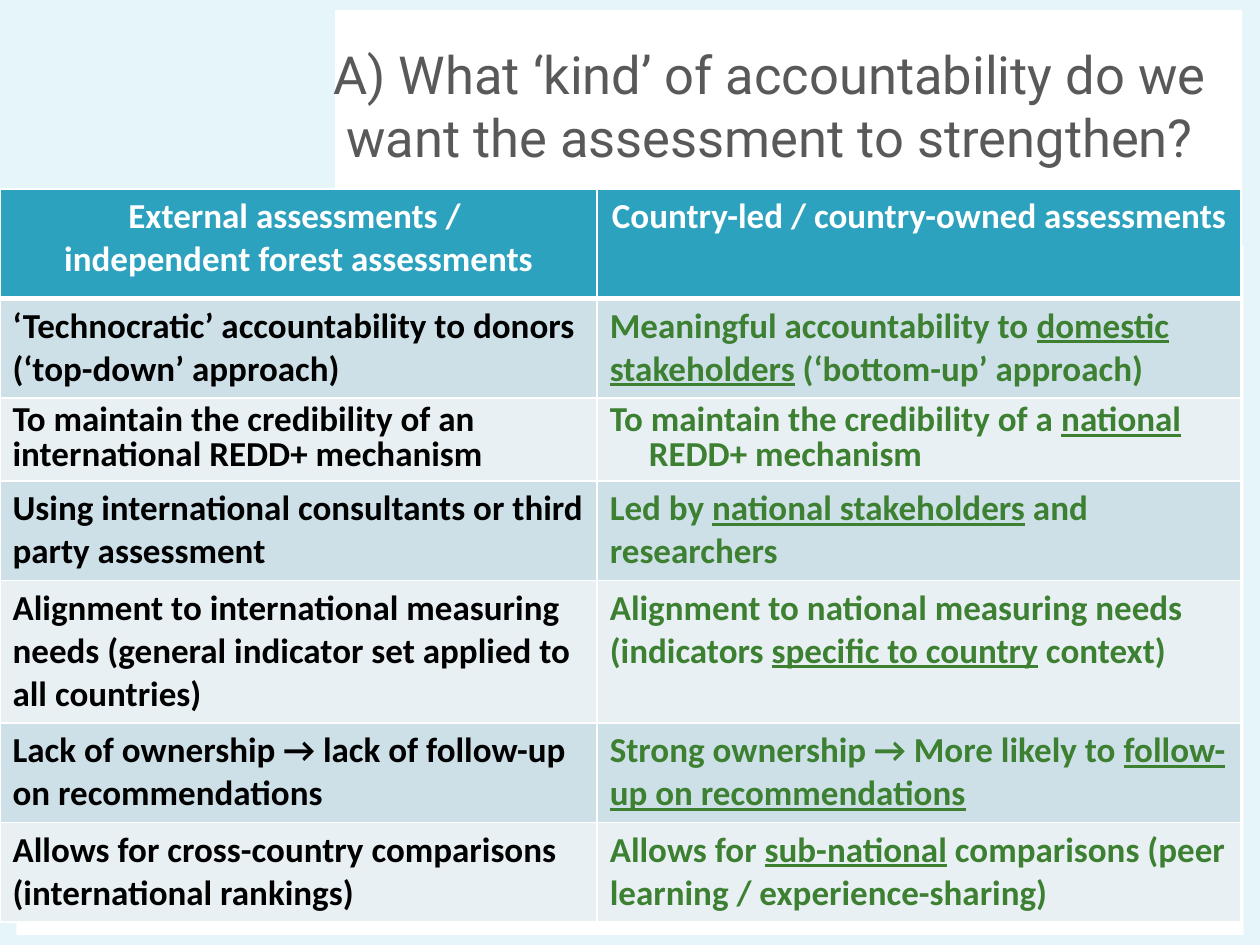
import pptx
import pptx.util
import pptx.dml.color
import pptx.enum.shapes
import pptx.enum.text
import pptx.oxml
import pptx.oxml.ns

RGB = pptx.dml.color.RGBColor
ALIGN = pptx.enum.text.PP_ALIGN
Pt = pptx.util.Pt
Inches = pptx.util.Inches

SKY = RGB(0xE5, 0xF5, 0xFA)
WHITE = RGB(0xFF, 0xFF, 0xFF)
BLACK = RGB(0, 0, 0)
GREY = RGB(0x59, 0x59, 0x59)
GREEN = RGB(0x3D, 0x80, 0x32)
TEAL = RGB(0x2D, 0xA2, 0xBF)
BANDS = [RGB(0xCD, 0xE0, 0xE8), RGB(0xE8, 0xF0, 0xF4)]

TITLE = "A) What ‘kind’ of accountability do we want the assessment to strengthen?"
HEADS = ["External assessments / \nindependent forest assessments",
         "Country-led / country-owned assessments"]
# Underscores enclose underlined words
ROWS = [
    ["‘Technocratic’ accountability to donors\n(‘top-down’ approach)",
     "Meaningful accountability to _domestic stakeholders_ (‘bottom-up’ approach)"],
    ["To maintain the credibility of an international REDD+ mechanism",
     "To maintain the credibility of a _national_ REDD+ mechanism"],
    ["Using international consultants or third party assessment",
     "Led by _national stakeholders_ and researchers"],
    ["Alignment to international measuring needs (general indicator set applied to all countries)",
     "Alignment to national measuring needs (indicators _specific to country_ context)"],
    ["Lack of ownership → lack of follow-up on recommendations",
     "Strong ownership → More likely to _follow-up on recommendations_"],
    ["Allows for cross-country comparisons (international rankings)",
     "Allows for _sub-national_ comparisons (peer learning / experience-sharing)"],
]
WIDTHS = [4.74, 5.11]
HEIGHTS = [0.87, 0.79, 0.66, 0.79, 1.13, 0.79, 0.79]
TIGHT = 2  # table row with close line spacing


def add_panel(slide, box):
    """White panel behind the content."""
    panel = slide.shapes.add_shape(pptx.enum.shapes.MSO_SHAPE.RECTANGLE,
                                   *map(Inches, box))
    panel.shadow.inherit = False
    panel.fill.solid()
    panel.fill.fore_color.rgb = WHITE
    panel.line.fill.background()


def set_title(slide, box):
    """Title placeholder, brought in front of the panels."""
    title = slide.shapes.title
    title.left, title.top, title.width, title.height = map(Inches, box)
    frame = title.text_frame
    frame.text = TITLE
    frame.word_wrap = True
    frame.auto_size = pptx.enum.text.MSO_AUTO_SIZE.NONE
    frame.vertical_anchor = pptx.enum.text.MSO_ANCHOR.MIDDLE
    para = frame.paragraphs[0]
    para.alignment = ALIGN.CENTER
    font = para.runs[0].font
    font.name, font.size, font.color.rgb = "Roboto", Pt(30), GREY
    slide.shapes._spTree.append(title._element)


def style_cell(cell, fill, base):
    """White borders, then the fill; base is the lower border in points."""
    props = cell._tc.get_or_add_tcPr()
    for side, width in zip("LRTB", [1, 1, 1, base]):
        props.append(pptx.oxml.parse_xml(
            f'<a:ln{side} {pptx.oxml.ns.nsdecls("a")} w="{Pt(width)}">'
            f'<a:solidFill><a:srgbClr val="{WHITE}"/></a:solidFill></a:ln{side}>'))
    cell.fill.solid()
    cell.fill.fore_color.rgb = fill


def write_cell(cell, text, color, align):
    cell.text_frame.text = text.replace("_", "")
    for para, line in zip(cell.text_frame.paragraphs, text.split("\n")):
        para.alignment = align
        para.clear()
        for i, part in enumerate(line.split("_")):
            if not part:
                continue
            run = para.add_run()
            run.text = part
            font = run.font
            font.name, font.size, font.bold = "Calibri", Pt(20), True
            font.color.rgb = color
            font.underline = i % 2 == 1


def add_grid(slide, left, top):
    """Comparison table with a header and banded rows."""
    grid = slide.shapes.add_table(
        len(HEIGHTS), len(WIDTHS), Inches(left), Inches(top),
        Inches(sum(WIDTHS)), Inches(sum(HEIGHTS))).table
    grid.first_row = grid.horz_banding = False
    for col, width in zip(grid.columns, WIDTHS):
        col.width = Inches(width)
    for row, height in zip(grid.rows, HEIGHTS):
        row.height = Inches(height)
    for r, texts in enumerate([HEADS] + ROWS):
        for c, text in enumerate(texts):
            cell = grid.cell(r, c)
            if r == 0:
                style_cell(cell, TEAL, 3)
                write_cell(cell, text, WHITE, ALIGN.CENTER)
            else:
                style_cell(cell, BANDS[(r - 1) % 2], 1)
                write_cell(cell, text, [BLACK, GREEN][c], ALIGN.LEFT)

    # Close lines, with a hanging indent on the right
    for c in range(len(WIDTHS)):
        grid.cell(TIGHT, c).text_frame.paragraphs[0].line_spacing = 0.8
    props = grid.cell(TIGHT, 1).text_frame.paragraphs[0]._p.get_or_add_pPr()
    props.set("marL", str(Inches(0.31)))
    props.set("indent", str(Inches(-0.31)))


def main():
    deck = pptx.Presentation()
    deck.slide_width, deck.slide_height = Inches(10), Inches(7.5)
    slide = deck.slides.add_slide(deck.slide_layouts[5])
    slide.background.fill.solid()
    slide.background.fill.fore_color.rgb = SKY

    add_panel(slide, (0.13, 1.95, 9.74, 5.47))
    add_panel(slide, (2.66, 0.08, 7.2, 1.8))
    add_grid(slide, 0, 1.5)
    set_title(slide, (2.53, 0, 7.16, 1.67))
    deck.save("out.pptx")


if __name__ == "__main__":
    main()
